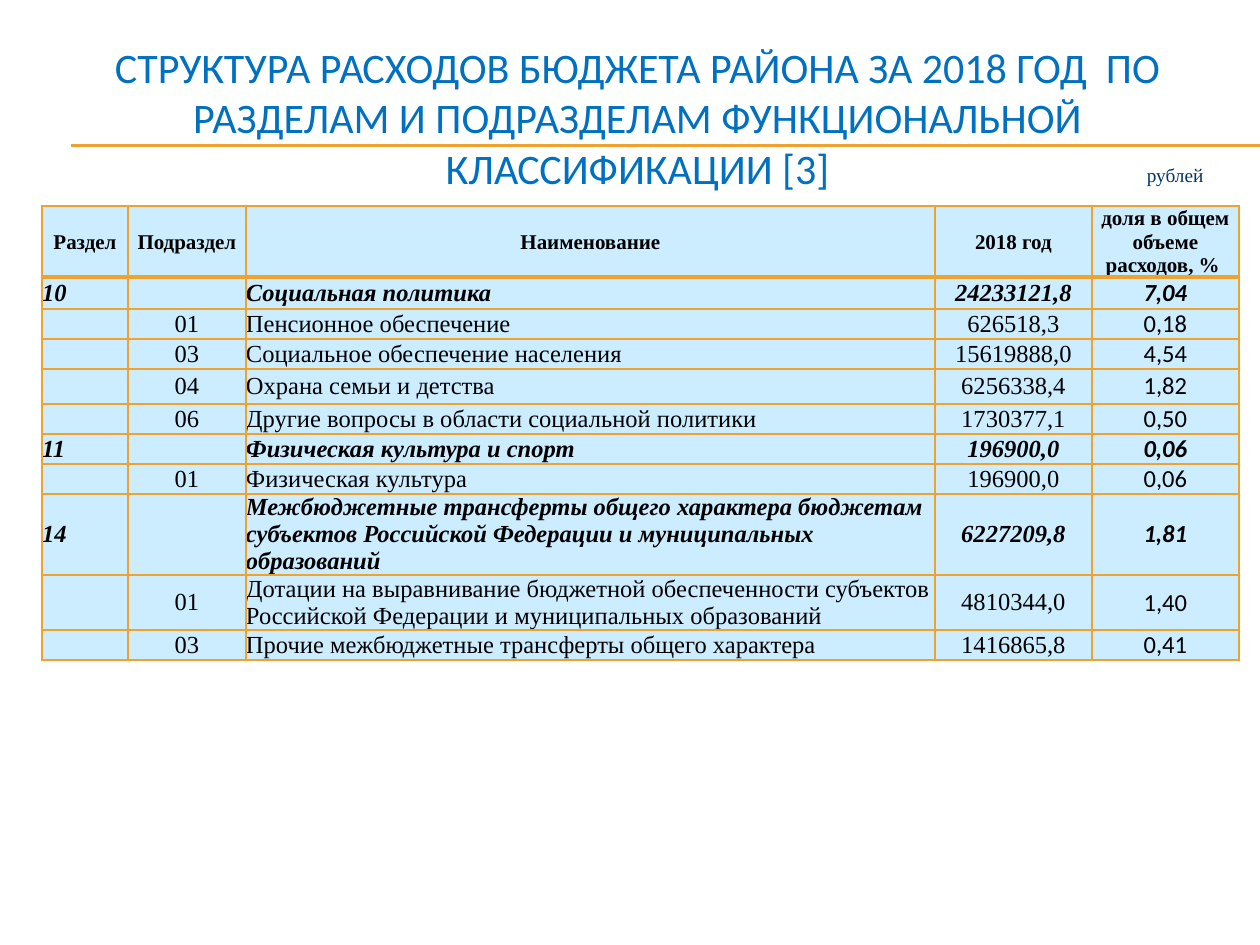
"""Builds the slide on the structure of district budget spending."""
from lxml import etree
from pptx import Presentation, util as u
from pptx.dml.color import RGBColor
from pptx.enum import shapes, text
from pptx.oxml.ns import qn

SCALE = 914400 // 126
HUES = {"title": "0070C0", "rule": "F0A22E", "cell": "CCECFF", "ink": "000000", "note": "003366"}
SERIF, SANS = "Times New Roman", "Calibri"
MID, LEFT, RIGHT = text.PP_ALIGN.CENTER, text.PP_ALIGN.LEFT, text.PP_ALIGN.RIGHT
COLS = [86, 118, 689, 157, 147]
ROWS = [71, 32, 30, 30, 35, 30, 30, 30, 81, 55, 29]
HEAD = ["Раздел", "Подраздел", "Наименование", "2018 год", "доля в общем объеме расходов, % "]
DATA = [
    ["10", "", "Социальная политика", "24233121,8", "7,04"],
    ["", "01", "Пенсионное обеспечение", "626518,3", "0,18"],
    ["", "03", "Социальное обеспечение населения", "15619888,0", "4,54"],
    ["", "04", "Охрана семьи и детства", "6256338,4", "1,82"],
    ["", "06", "Другие вопросы в области социальной политики", "1730377,1", "0,50"],
    ["11", "", "Физическая культура и спорт", "196900,0", "0,06"],
    ["", "01", "Физическая культура", "196900,0", "0,06"],
    ["14", "", "Межбюджетные трансферты общего характера бюджетам субъектов "
     "Российской Федерации и муниципальных образований", "6227209,8", "1,81"],
    ["", "01", "Дотации на выравнивание бюджетной обеспеченности субъектов "
     "Российской Федерации и муниципальных образований", "4810344,0", "1,40"],
    ["", "03", "Прочие межбюджетные трансферты общего характера", "1416865,8", "0,41"],
]


def px(n):
    return u.Emu(n * SCALE)


class Deck:
    def __init__(self, wide, high):
        self.prs = Presentation()
        self.prs.slide_width, self.prs.slide_height = px(wide), px(high)
        self.slide = self.prs.slides.add_slide(self.prs.slide_layouts[5])

    def put(self, para, words, size, font, hue, align, bold=False, slant=False):
        para.alignment = align
        run = para.add_run()
        run.text = words
        face = run.font
        face.size, face.name, face.bold, face.italic = u.Pt(size), font, bold, slant
        face.color.rgb = RGBColor.from_string(HUES[hue])

    def title(self, words, x, y, w, h):
        box = self.slide.shapes.title
        box.left, box.top, box.width, box.height = map(px, (x, y, w, h))
        frame = box.text_frame
        frame.word_wrap, frame.auto_size = True, text.MSO_AUTO_SIZE.NONE
        frame.vertical_anchor = text.MSO_ANCHOR.MIDDLE
        self.put(frame.paragraphs[0], words, 24, SANS, "title", MID)

    def rule(self, x, y, end):
        line = self.slide.shapes.add_connector(
            shapes.MSO_CONNECTOR.STRAIGHT, px(x), px(y), px(end), px(y))
        line.line.color.rgb = RGBColor.from_string(HUES["rule"])
        line.line.width = u.Pt(0.75)
        etree.SubElement(line._element.spPr, qn("a:effectLst"))
        self.slide.shapes._spTree.insert(2, line._element)

    def note(self, words, x, y, w, h):
        box = self.slide.shapes.add_textbox(*map(px, (x, y, w, h)))
        frame = box.text_frame
        frame.word_wrap, frame.auto_size = False, text.MSO_AUTO_SIZE.SHAPE_TO_FIT_TEXT
        self.put(frame.paragraphs[0], words, 11, SERIF, "note", RIGHT)

    def edge(self, cell, side, width):
        line = etree.SubElement(cell._tc.get_or_add_tcPr(), qn("a:ln" + side), w=str(u.Pt(width)))
        fill = etree.SubElement(line, qn("a:solidFill"))
        etree.SubElement(fill, qn("a:srgbClr"), val=HUES["rule"])

    def cell(self, cell, words, heavy, **look):
        for side in "LRTB":
            self.edge(cell, side, 2 if side == heavy else 1)
        cell.fill.solid()
        cell.fill.fore_color.rgb = RGBColor.from_string(HUES["cell"])
        cell.vertical_anchor = text.MSO_ANCHOR.MIDDLE
        gap = px(1 if heavy == "B" else 0)
        cell.margin_left = cell.margin_right = cell.margin_top = gap
        cell.margin_bottom = 0
        para = cell.text_frame.paragraphs[0]
        if words:
            self.put(para, words, hue="ink", **look)
        else:
            etree.SubElement(para._p, qn("a:endParaRPr"), sz=str(look["size"] * 100))

    def table(self, x, y):
        grid = self.slide.shapes.add_table(
            len(ROWS), len(COLS), px(x), px(y), px(sum(COLS)), px(sum(ROWS))).table
        grid.first_row = grid.horz_banding = False
        for col, wide in zip(grid.columns, COLS):
            col.width = px(wide)
        for row, high in zip(grid.rows, ROWS):
            row.height = px(high)
        for c, words in enumerate(HEAD):
            self.cell(grid.cell(0, c), words, "B", size=12, font=SERIF, align=MID, bold=True)
        grid.cell(0, 4).vertical_anchor = text.MSO_ANCHOR.BOTTOM
        for r, row in enumerate(DATA, 1):
            main = bool(row[0])
            for c, words in enumerate(row):
                self.cell(grid.cell(r, c), words, "T" if r == 1 else "", size=14,
                          font=SANS if c == 4 else SERIF,
                          align=LEFT if c in (0, 2) else MID, bold=main, slant=main)


def main():
    deck = Deck(1260, 945)
    for y in (146, 145):
        deck.rule(71, y, 1260)
    deck.title("СТРУКТУРА РАСХОДОВ БЮДЖЕТА РАЙОНА ЗА 2018 ГОД  ПО РАЗДЕЛАМ И ПОДРАЗДЕЛАМ "
               "ФУНКЦИОНАЛЬНОЙ КЛАССИФИКАЦИИ [3]", 39, 59, 1197, 116)
    deck.table(42, 206)
    deck.note("рублей", 1133, 157, 83, 36)
    deck.prs.save("out.pptx")


if __name__ == "__main__":
    main()
